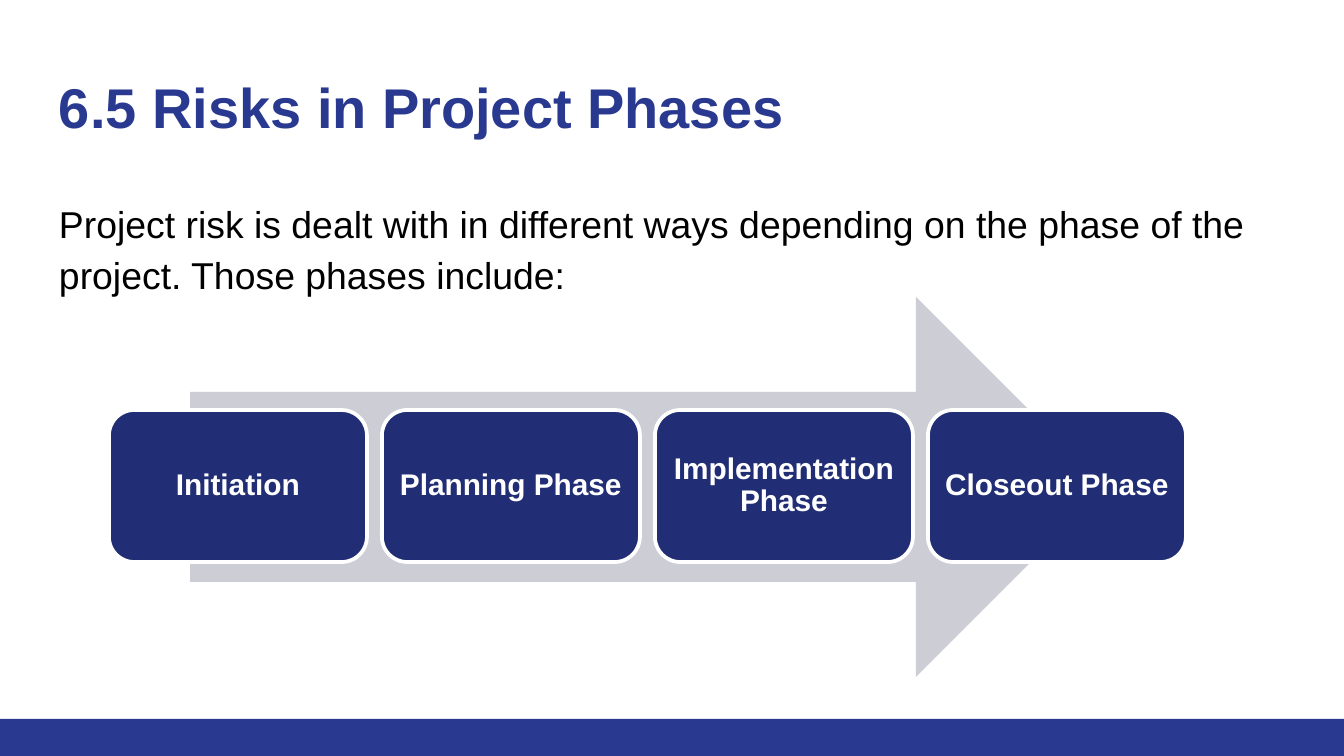
import pptx
import pptx.util
import pptx.dml.color
import pptx.enum.shapes
import pptx.enum.text
import pptx.oxml.ns
from lxml import etree

TITLE = "6.5 Risks in Project Phases"
BODY = ("Project risk is dealt with in different ways depending on the phase "
        "of the project. Those phases include:")
PHASES = ["Initiation", "Planning Phase", "Implementation Phase", "Closeout Phase"]

COLORS = {"blue": "2A3990", "navy": "212D74", "gray": "CDCDD6",
          "black": "000000", "white": "FFFFFF"}
FONT = "Arial"
SCALE = 914400 / 134.4  # EMU per px
WIDTH, HEIGHT = 1344, 756
LEFT, TOP, BOX_W, BOX_H, STEP = 109, 410, 258, 152, 273

KIND = pptx.enum.shapes.MSO_SHAPE
ALIGN = pptx.enum.text.PP_ALIGN
ANCHOR = pptx.enum.text.MSO_ANCHOR


def px(n):
    return pptx.util.Emu(round(n * SCALE))


def rgb(name):
    return pptx.dml.color.RGBColor.from_string(COLORS[name])


def place(shape, x, y, w, h):
    shape.left, shape.top, shape.width, shape.height = map(px, (x, y, w, h))


def write(shape, text, size, color, bold=False, align=ALIGN.LEFT,
          anchor=ANCHOR.TOP, lines=1.0, inset=13):
    frame = shape.text_frame
    frame.word_wrap = True
    frame.auto_size = pptx.enum.text.MSO_AUTO_SIZE.NONE
    frame.vertical_anchor = anchor
    frame.margin_left = frame.margin_right = px(inset)
    frame.margin_top = frame.margin_bottom = px(inset)
    para = frame.paragraphs[0]
    para.text = text
    para.alignment = align
    para.line_spacing = lines
    para.space_before = pptx.util.Pt(0)
    font = para.runs[0].font
    font.name, font.size, font.bold = FONT, pptx.util.Pt(size), bold
    font.color.rgb = rgb(color)
    return para


def draw(slide, kind, x, y, w, h, fill, line=None):
    shape = slide.shapes.add_shape(kind, *map(px, (x, y, w, h)))
    shape.shadow.inherit = False
    shape.fill.solid()
    shape.fill.fore_color.rgb = rgb(fill)
    if line:
        shape.line.color.rgb = rgb(line)
        shape.line.width = pptx.util.Pt(2)
    else:
        shape.line.fill.background()
    return shape


def main():
    deck = pptx.Presentation()
    deck.slide_width, deck.slide_height = px(WIDTH), px(HEIGHT)
    slide = deck.slides.add_slide(deck.slide_layouts[1])

    title, body = slide.placeholders
    place(title, 46, 60, 1253, 89)
    write(title, TITLE, 30, "blue", bold=True)

    place(body, 46, 181, 1253, 180)
    props = write(body, BODY, 20, "black", lines=1.15)._p.get_or_add_pPr()
    props.set("marL", "0")
    props.set("indent", "0")
    etree.SubElement(props, pptx.oxml.ns.qn("a:buNone"))

    draw(slide, KIND.RECTANGLE, 0, 719, WIDTH, HEIGHT - 719, "blue")
    draw(slide, KIND.RIGHT_ARROW, 190, 297, 916, 380, "gray")
    for i, phase in enumerate(PHASES):
        box = draw(slide, KIND.ROUNDED_RECTANGLE, LEFT + i * STEP, TOP,
                   BOX_W, BOX_H, "navy", "white")
        write(box, phase, 16, "white", bold=True, align=ALIGN.CENTER,
              anchor=ANCHOR.MIDDLE, lines=0.9, inset=9)

    deck.save("out.pptx")


if __name__ == "__main__":
    main()
